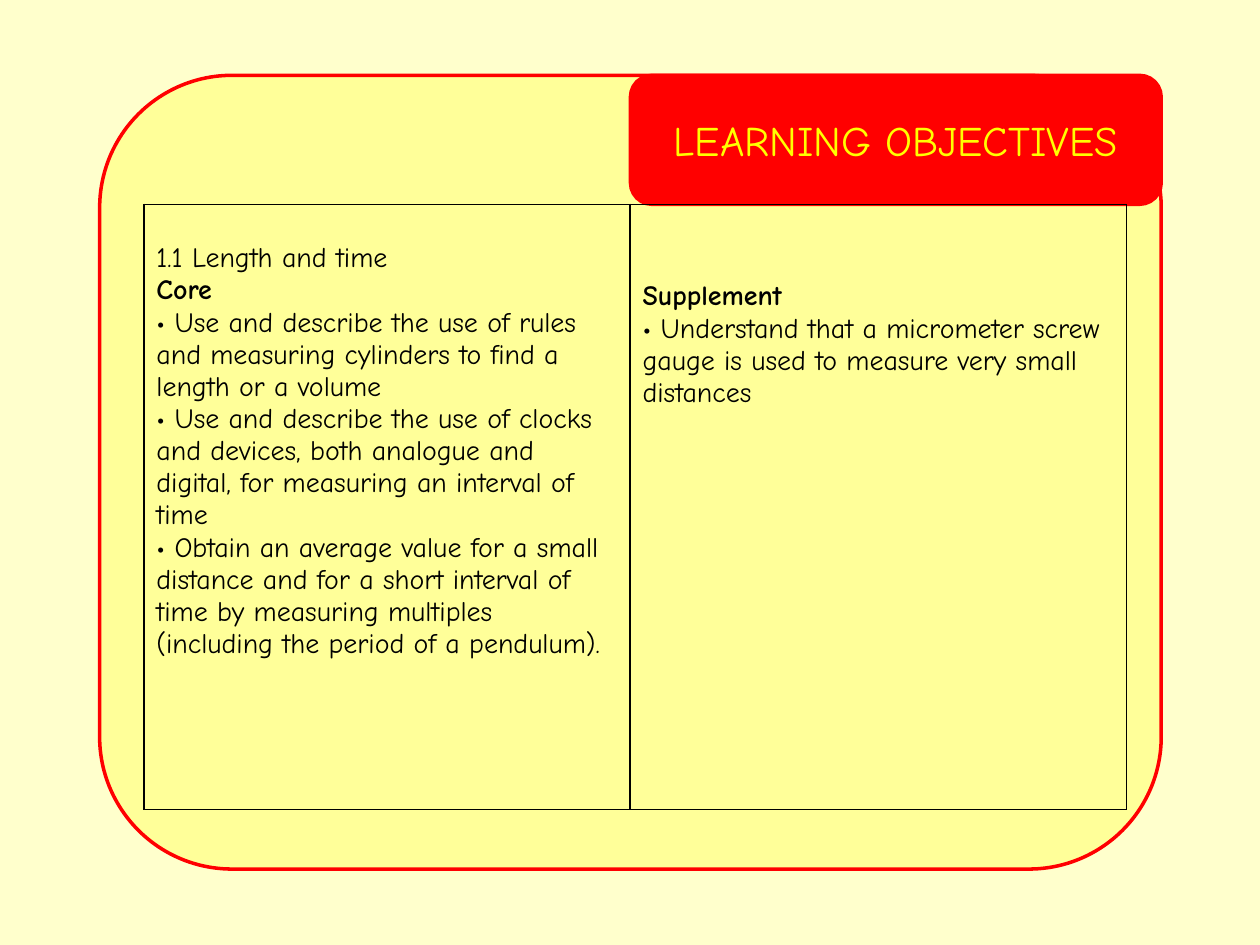
import pptx
import pptx.util
import pptx.dml.color
import pptx.enum.shapes
import pptx.enum.text
import pptx.oxml
import pptx.oxml.ns

Cm, Pt = pptx.util.Cm, pptx.util.Pt
SHAPE = pptx.enum.shapes.MSO_SHAPE

# Content
TITLE = "LEARNING OBJECTIVES"
CORE = [
    ("1.1 Length and time", False),
    ("Core", True),
    ("• Use and describe the use of rules and measuring cylinders to find a length or a volume", False),
    ("• Use and describe the use of clocks and devices, both analogue and digital, "
     "for measuring an interval of time", False),
    ("• Obtain an average value for a small distance and for a short interval of time "
     "by measuring multiples (including the period of a pendulum).", False),
]
SUPPLEMENT = [
    ("Supplement", True),
    ("• Understand that a micrometer screw gauge is used to measure very small distances", False),
]
# Column text, width and top margin in cm
COLUMNS = [(CORE, 9.8, 0.77), (SUPPLEMENT, 10.01, 1.54)]

FONT = "Comic Neue"
COLORS = {"page": "FFFFCC", "panel": "FFFF99", "accent": "FF0000",
          "title": "FFFF00", "text": "000000"}

# Layout in cm
PAGE_W, PAGE_H = 25.4, 19.05
PANEL_X, PANEL_Y, PANEL_W, PANEL_H = 2.01, 1.52, 21.4, 16
TITLE_W, TITLE_H = 10.7, 2.6
TABLE_X, TABLE_Y, TABLE_H = 2.9, 4.12, 12.2


def rgb(name):
    return pptx.dml.color.RGBColor.from_string(COLORS[name])


def add_box(s, kind, x, y, w, h, fill, line=None):
    sp = s.shapes.add_shape(kind, Cm(x), Cm(y), Cm(w), Cm(h))
    sp.shadow.inherit = False
    sp.fill.solid()
    sp.fill.fore_color.rgb = rgb(fill)
    if line:
        sp.line.color.rgb = rgb(line)
        sp.line.width = Pt(2)
    else:
        sp.line.fill.background()
    return sp


def add_run(p, text, size, color, bold=False):
    r = p.add_run()
    r.text = text
    r.font.name = FONT
    r.font.size = Pt(size)
    r.font.bold = bold
    r.font.color.rgb = rgb(color)


def add_borders(cell):
    # Borders must come before the fill in the cell properties
    for i, side in enumerate(("lnL", "lnR", "lnT", "lnB")):
        cell._tc.get_or_add_tcPr().insert(i, pptx.oxml.parse_xml(
            f'<a:{side} {pptx.oxml.ns.nsdecls("a")} w="{Pt(1)}"><a:solidFill>'
            f'<a:srgbClr val="{COLORS["text"]}"/></a:solidFill></a:{side}>'))


def main():
    prs = pptx.Presentation()
    prs.slide_width, prs.slide_height = Cm(PAGE_W), Cm(PAGE_H)
    s = prs.slides.add_slide(prs.slide_layouts[6])

    # Page and rounded panel
    add_box(s, SHAPE.RECTANGLE, 0, 0, PAGE_W, PAGE_H, "page")
    add_box(s, SHAPE.ROUNDED_RECTANGLE, PANEL_X, PANEL_Y, PANEL_W, PANEL_H, "panel", "accent")

    # Title tab in the panel's top right corner
    sp = add_box(s, SHAPE.ROUNDED_RECTANGLE, PANEL_X + PANEL_W - TITLE_W, PANEL_Y,
                 TITLE_W, TITLE_H, "accent", "accent")
    tf = sp.text_frame
    tf.vertical_anchor = pptx.enum.text.MSO_ANCHOR.MIDDLE
    p = tf.paragraphs[0]
    p.alignment = pptx.enum.text.PP_ALIGN.CENTER
    add_run(p, TITLE, 24, "title")

    # Objectives table
    table_w = sum(width for _, width, _ in COLUMNS)
    table = s.shapes.add_table(1, len(COLUMNS), Cm(TABLE_X), Cm(TABLE_Y),
                               Cm(table_w), Cm(TABLE_H)).table
    table.first_row = table.horz_banding = False
    for i, (lines, width, top) in enumerate(COLUMNS):
        table.columns[i].width = Cm(width)
        cell = table.cell(0, i)
        cell.fill.background()
        cell.margin_top = Cm(top)
        add_borders(cell)
        tf = cell.text_frame
        for n, (text, bold) in enumerate(lines):
            p = tf.add_paragraph() if n else tf.paragraphs[0]
            add_run(p, text, 16, "text", bold)

    prs.save("out.pptx")


if __name__ == "__main__":
    main()
